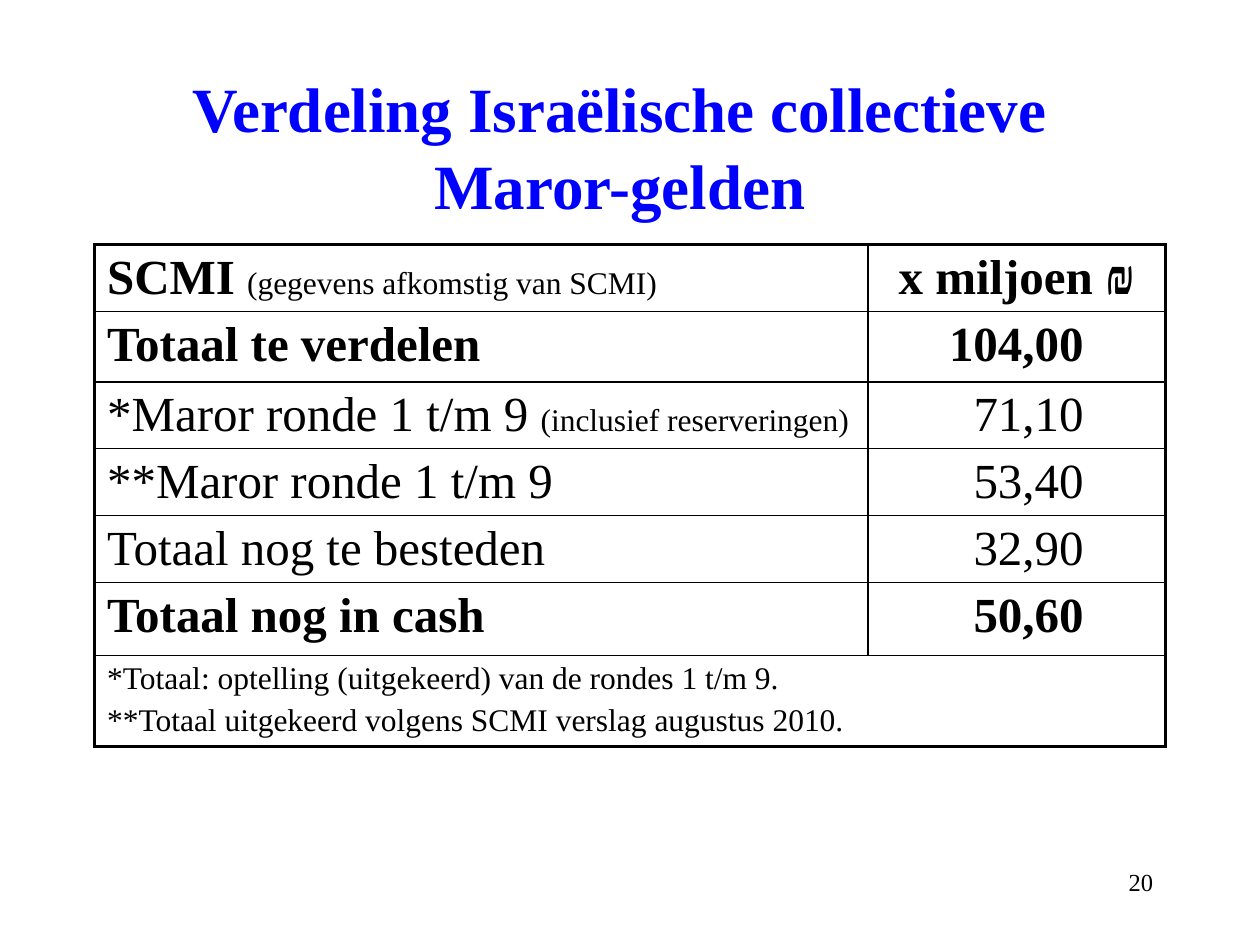
from lxml import etree
from pptx import Presentation
from pptx.dml.color import RGBColor
from pptx.enum.text import MSO_ANCHOR, MSO_AUTO_SIZE, PP_ALIGN
from pptx.oxml.ns import qn
from pptx.util import Inches, Pt

LEFT, CENTER, RIGHT = PP_ALIGN.LEFT, PP_ALIGN.CENTER, PP_ALIGN.RIGHT
MIDDLE, NO_FIT = MSO_ANCHOR.MIDDLE, MSO_AUTO_SIZE.NONE
BLACK, BLUE = "000000", "0000FF"
THIN, THICK = Pt(0.96), Pt(2.21)
LARGE, SMALL = 28, 18


def write(para, text, size=LARGE, bold=False, color=BLACK, align=LEFT, before=0):
    para.alignment = align
    para.space_before = Pt(before)
    for index, line in enumerate(text.split("\n")):
        if index:
            para.add_line_break()
        span = para.add_run()
        span.text = line
        span.font.name = "Times New Roman"
        span.font.size = Pt(size)
        span.font.bold = bold
        span.font.color.rgb = RGBColor.from_string(color)


def draw_borders(cell, **widths):
    properties = cell._tc.get_or_add_tcPr()
    for index, side in enumerate("LRTB"):
        line = etree.Element(qn("a:ln" + side), w=str(widths[side]))
        fill = etree.SubElement(line, qn("a:solidFill"))
        etree.SubElement(fill, qn("a:srgbClr"), val=BLACK)
        properties.insert(index, line)


deck = Presentation()
deck.slide_width, deck.slide_height = Inches(10), Inches(7.5)
page = deck.slides.add_slide(deck.slide_layouts[5])

title = page.shapes.title
title.left, title.top = Inches(0.59), Inches(0.6)
title.width, title.height = Inches(8.66), Inches(1.1)
title.text_frame.auto_size = NO_FIT
title.text_frame.word_wrap = True
title.text_frame.vertical_anchor = MIDDLE
heading = title.text_frame.paragraphs[0]
heading.line_spacing = Pt(44)
write(heading, "Verdeling Israëlische collectieve\nMaror-gelden",
      size=36, bold=True, color=BLUE, align=CENTER)

entries = [
    ("SCMI ", "(gegevens afkomstig van SCMI)", "x miljoen ₪", True),
    ("Totaal te verdelen", "", "104,00", True),
    ("*Maror ronde 1 t/m 9 ", "(inclusief reserveringen)", "71,10", False),
    ("**Maror ronde 1 t/m 9", "", "53,40", False),
    ("Totaal nog te besteden", "", "32,90", False),
    ("Totaal nog in cash", "", "50,60", True),
]
footnotes = [
    "*Totaal: optelling (uitgekeerd) van de rondes 1 t/m 9.",
    "**Totaal uitgekeerd volgens SCMI verslag augustus 2010.",
]
column_widths = [6.14, 2.36]
row_heights = [0.53, 0.56, 0.53, 0.53, 0.53, 0.58, 0.72]
last_row, last_column = len(row_heights) - 1, len(column_widths) - 1

table = page.shapes.add_table(
    len(row_heights), len(column_widths), Inches(0.75), Inches(1.94),
    Inches(sum(column_widths)), Inches(sum(row_heights))).table
table.first_row = table.horz_banding = False
for column, width in zip(table.columns, column_widths):
    column.width = Inches(width)
for row, height in zip(table.rows, row_heights):
    row.height = Inches(height)

for row, (label, remark, amount, bold) in enumerate(entries):
    label_para = table.cell(row, 0).text_frame.paragraphs[0]
    write(label_para, label, bold=bold, before=5.6)
    if remark:
        write(label_para, remark, size=SMALL, before=5.6)
    amount_cell = table.cell(row, 1)
    if row:
        amount_cell.margin_right = Inches(0.65)
    write(amount_cell.text_frame.paragraphs[0], amount, bold=bold,
          align=RIGHT if row else CENTER, before=5.6)

note_cell = table.cell(last_row, 0)
note_cell.merge(table.cell(last_row, last_column))
note_frame = note_cell.text_frame
for index, note in enumerate(footnotes):
    para = note_frame.add_paragraph() if index else note_frame.paragraphs[0]
    write(para, note, size=SMALL, before=3.6)

for row in range(last_row + 1):
    for column in range(last_column + 1):
        cell = table.cell(row, column)
        cell.fill.background()
        draw_borders(
            cell,
            L=THICK if column == 0 else THIN,
            R=THICK if column == last_column or row == last_row else THIN,
            T=THICK if row == 0 else THIN,
            B=THICK if row == last_row else THIN)

number_box = page.shapes.add_textbox(
    Inches(7.17), Inches(6.83), Inches(2.08), Inches(0.5))
number_box.text_frame.word_wrap = True
write(number_box.text_frame.paragraphs[0], "20", size=14, align=RIGHT)

deck.save("out.pptx")
